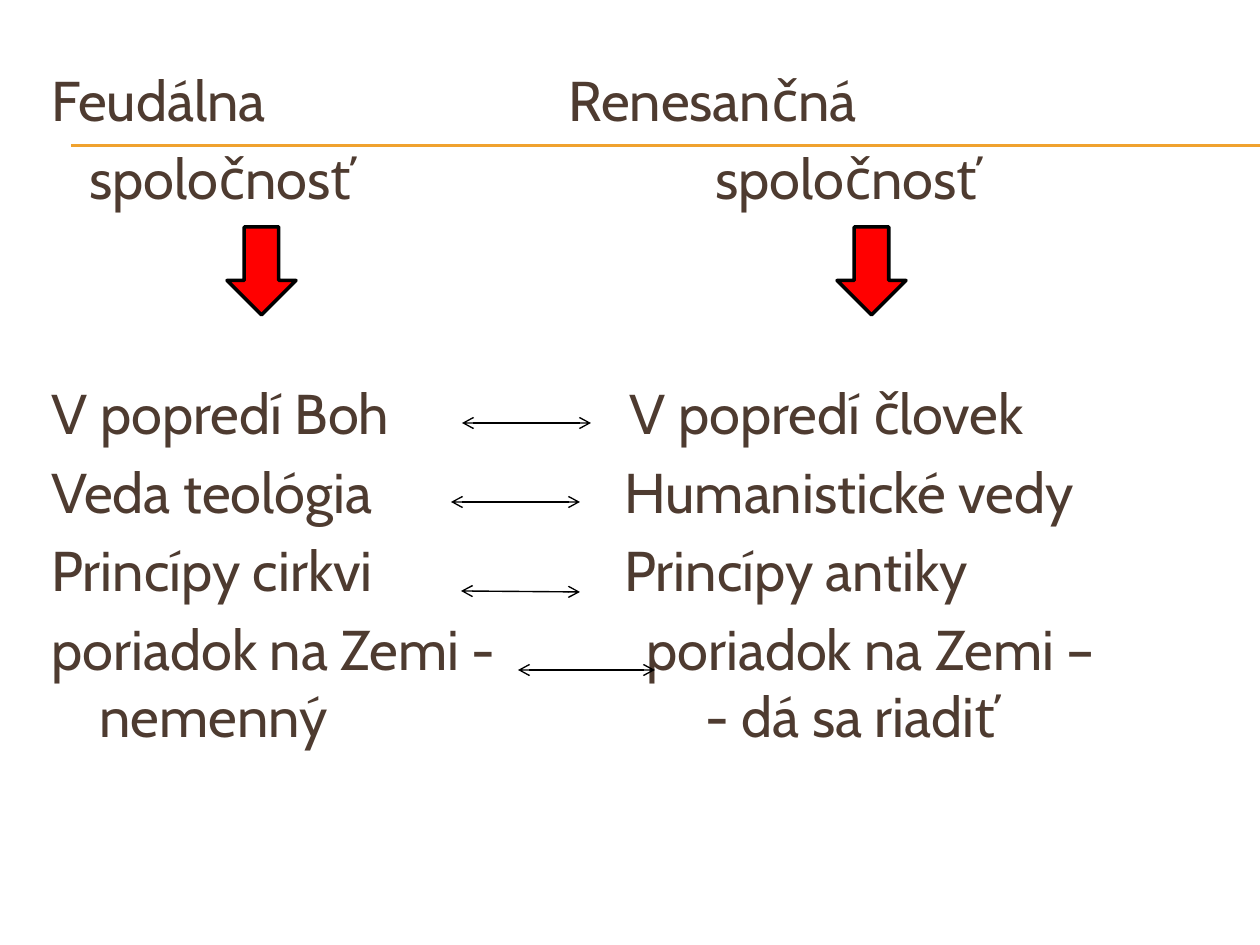
import pptx
import pptx.dml.color
import pptx.enum.shapes
import pptx.enum.text
import pptx.oxml
import pptx.oxml.ns
import pptx.util
from lxml import etree

EMU_PER_PX = 914400 / 126
WIDTH, HEIGHT = 1260, 945

# text with tabs between the columns, tab stops in px, space before in pt
COMPARISON = [
    ("Feudálna\tRenesančná", [517], 6.4),
    ("\tspoločnosť\tspoločnosť", [38, 664], 6.4),
    ("V popredí Boh\tV popredí človek", [578], 96),
    ("Veda teológia\tHumanistické vedy", [573], 6.4),
    ("Princípy cirkvi\tPrincípy antiky", [573], 6.4),
    ("poriadok na Zemi -\tporiadok na Zemi –", [595], 6.4),
    ("\tnemenný\t- dá sa riadiť", [48, 654], 0),
]
RULES_Y = [145, 146]
DOWN_ARROWS_X = [227, 837]
DOUBLE_ARROWS = [
    (462, 423, 591, 423),
    (451, 502, 580, 502),
    (461, 591, 580, 592),
    (518, 670, 655, 670),
]


def px(length):
    return pptx.util.Emu(round(length * EMU_PER_PX))


def color(hex_string):
    return pptx.dml.color.RGBColor.from_string(hex_string)


def add_element(parent, tag, **attributes):
    return etree.SubElement(parent, pptx.oxml.ns.qn(tag), attributes)


class SlideBuilder:
    font = "Cabin"
    size = 32
    text_color = "4E3B30"
    rule_color = "F0A22E"
    arrow_fill = "FF0000"
    arrow_line = "000000"

    def __init__(self, slide):
        self.slide = slide

    def line(self, x1, y1, x2, y2, line_color, width, heads=False):
        connector = self.slide.shapes.add_connector(
            pptx.enum.shapes.MSO_CONNECTOR.STRAIGHT, px(x1), px(y1), px(x2), px(y2))
        connector.line.color.rgb = color(line_color)
        connector.line.width = pptx.util.Pt(width)
        if heads:
            outline = connector.line._get_or_add_ln()
            add_element(outline, "a:headEnd", type="arrow")
            add_element(outline, "a:tailEnd", type="arrow")
        add_element(connector._element.spPr, "a:effectLst")

    def rule(self, y):
        self.line(71, y, WIDTH, y, self.rule_color, 0.75)

    def double_arrow(self, x1, y1, x2, y2):
        self.line(x1, y1, x2, y2, self.arrow_line, 0.79, heads=True)

    def down_arrow(self, x, y, width, height):
        arrow = self.slide.shapes.add_shape(
            pptx.enum.shapes.MSO_SHAPE.DOWN_ARROW, px(x), px(y), px(width), px(height))
        arrow.shadow.inherit = False
        arrow.fill.solid()
        arrow.fill.fore_color.rgb = color(self.arrow_fill)
        arrow.line.color.rgb = color(self.arrow_line)
        arrow.line.width = pptx.util.Pt(2)

    def tabbed_text(self, x, y, width, height, rows):
        """Add one text box whose columns are aligned by tab stops."""
        frame = self.slide.shapes.add_textbox(px(x), px(y), px(width), px(height)).text_frame
        frame.word_wrap = True
        frame.auto_size = pptx.enum.text.MSO_AUTO_SIZE.NONE
        frame.text = "\n".join(text for text, _, _ in rows)
        for paragraph, (_, stops, space_before) in zip(frame.paragraphs, rows):
            paragraph.space_before = pptx.util.Pt(space_before)
            tabs = add_element(paragraph._p.get_or_add_pPr(), "a:tabLst")
            for stop in stops:
                add_element(tabs, "a:tab", pos=str(px(stop)), algn="l")
            for run in paragraph.runs:
                run.font.name = self.font
                run.font.size = pptx.util.Pt(self.size)
                run.font.color.rgb = color(self.text_color)


def main():
    presentation = pptx.Presentation()
    presentation.slide_width, presentation.slide_height = px(WIDTH), px(HEIGHT)
    builder = SlideBuilder(presentation.slides.add_slide(presentation.slide_layouts[6]))

    for y in RULES_Y:
        builder.rule(y)
    builder.tabbed_text(39, 59, 1163, 712, COMPARISON)
    for x in DOWN_ARROWS_X:
        builder.down_arrow(x, 227, 69, 88)
    for ends in DOUBLE_ARROWS:
        builder.double_arrow(*ends)

    presentation.save("out.pptx")


if __name__ == "__main__":
    main()
